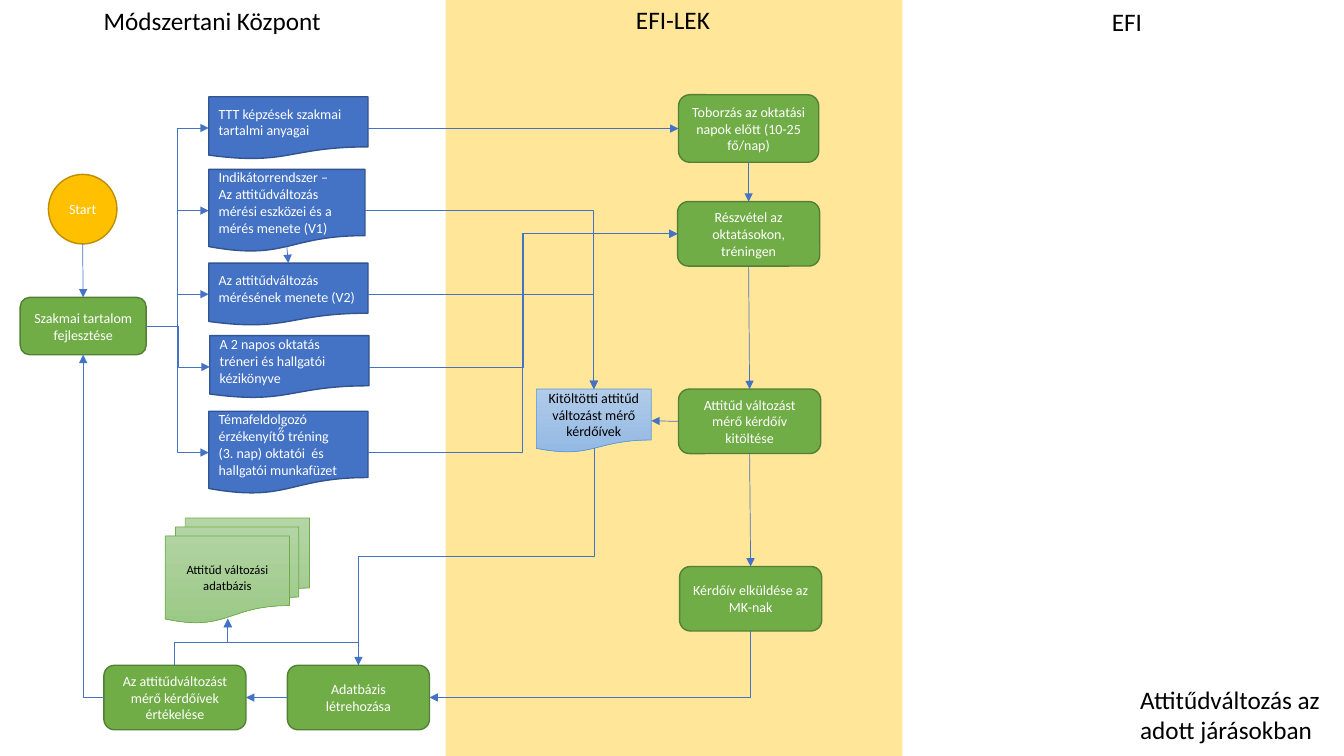
from lxml import etree
from pptx import Presentation
from pptx.dml.color import RGBColor
from pptx.enum.shapes import MSO_CONNECTOR, MSO_SHAPE
from pptx.enum.text import MSO_ANCHOR, PP_ALIGN
from pptx.oxml.ns import qn
from pptx.util import Pt

PX = 9144
LEFT, CENTER = PP_ALIGN.LEFT, PP_ALIGN.CENTER
MIDDLE = MSO_ANCHOR.MIDDLE
STRAIGHT, ELBOW = MSO_CONNECTOR.STRAIGHT, MSO_CONNECTOR.ELBOW
RECTANGLE, ROUNDED = MSO_SHAPE.RECTANGLE, MSO_SHAPE.ROUNDED_RECTANGLE
DOCUMENT, MULTIDOCUMENT = MSO_SHAPE.FLOWCHART_DOCUMENT, MSO_SHAPE.FLOWCHART_MULTIDOCUMENT
CIRCLE = MSO_SHAPE.FLOWCHART_CONNECTOR
TOP_SIDE, LEFT_SIDE, BOTTOM_SIDE, RIGHT_SIDE = range(4)
DOCUMENT_DEPTH = 0.934
FONT = "Calibri"
BLACK, WHITE, BLUE = "000000", "FFFFFF", "4472C4"


def color(value):
    return RGBColor.from_string(value)


def write(shape, lines, size, value, align):
    frame = shape.text_frame
    for index, line in enumerate(lines):
        para = frame.paragraphs[0] if index == 0 else frame.add_paragraph()
        para.text = line
        para.alignment = align
        para.font.name = FONT
        para.font.size = Pt(size)
        para.font.color.rgb = color(value)


def add_label(page, box, words, wrap=False):
    label = page.shapes.add_textbox(*(length * PX for length in box))
    label.text_frame.word_wrap = wrap
    write(label, [words], 18, BLACK, LEFT)


def add_node(page, kind, box, lines, fill, border, size=10, ink=WHITE, align=CENTER, weight=1):
    node = page.shapes.add_shape(kind, *(length * PX for length in box))
    node.shadow.inherit = False
    if len(fill) == 1:
        node.fill.solid()
        node.fill.fore_color.rgb = color(fill[0])
    else:
        node.fill.gradient()
        node.fill.gradient_angle = 270
        for stop, value in zip(node.fill.gradient_stops, fill):
            stop.color.rgb = color(value)
    node.line.color.rgb = color(border)
    node.line.width = Pt(weight)
    node.text_frame.word_wrap = True
    node.text_frame.vertical_anchor = MIDDLE
    write(node, lines, size, ink, align)
    return node


def add_task(page, box, words):
    return add_node(page, ROUNDED, box, [words], ["70AD47"], "538035")


def add_material(page, box, lines):
    return add_node(page, DOCUMENT, box, lines, [BLUE], "325491", align=LEFT)


def side(node, site):
    depth = DOCUMENT_DEPTH if node.auto_shape_type == DOCUMENT else 1
    middle_x, middle_y = node.left + node.width // 2, node.top + node.height // 2
    return (
        (middle_x, node.top),
        (node.left, middle_y),
        (middle_x, node.top + int(node.height * depth)),
        (node.left + node.width, middle_y),
    )[site]


def style_arrow(arrow):
    arrow.line.color.rgb = color(BLUE)
    arrow.line.width = Pt(0.5)
    properties = arrow._element.spPr
    tail = etree.SubElement(properties.find(qn("a:ln")), qn("a:tailEnd"))
    tail.set("type", "triangle")
    etree.SubElement(properties, qn("a:effectLst"))


def add_straight(page, source, source_site, target, target_site):
    arrow = page.shapes.add_connector(
        STRAIGHT, *side(source, source_site), *side(target, target_site))
    if source.auto_shape_type == ROUNDED:
        arrow.begin_connect(source, source_site)
    arrow.end_connect(target, target_site)
    style_arrow(arrow)


def add_elbow(page, start, end, vertical=False, single=False):
    (start_x, start_y), (end_x, end_y) = start, end
    if vertical:
        middle_x, middle_y = (start_x + end_x) // 2, (start_y + end_y) // 2
        half_x, half_y = (end_x - start_x) // 2, (end_y - start_y) // 2
        start_x, end_x = middle_x - half_y, middle_x + half_y
        start_y, end_y = middle_y + half_x, middle_y - half_x
    arrow = page.shapes.add_connector(ELBOW, start_x, start_y, end_x, end_y)
    properties = arrow._element.spPr
    if vertical:
        properties.find(qn("a:xfrm")).set("rot", "5400000")
    if single:
        properties.find(qn("a:prstGeom")).set("prst", "bentConnector2")
    style_arrow(arrow)


def draw_center_lane(page, box):
    left, top, width, height = box
    add_label(page, (left + 93, top, 238, 40), "Módszertani Központ")
    start = add_node(page, CIRCLE, (left + 48, top + 173, 68, 69), ["Start"], ["FFC000"], "BD8E00")
    develop = add_task(page, (left + 20, top + 295, 125, 57), "Szakmai tartalom fejlesztése")
    materials = [
        add_material(page, (left + x, top + y, w, h), lines)
        for x, y, w, h, lines in (
            (207, 96, 158, 62, ["TTT képzések szakmai tartalmi anyagai"]),
            (207, 168, 155, 82, ["Indikátorrendszer –",
                                 "Az attitűdváltozás mérési eszközei és a mérés menete (V1)"]),
            (207, 261, 158, 62, ["Az attitűdváltozás mérésének menete (V2)"]),
            (208, 333, 158, 62, ["A 2 napos oktatás tréneri és hallgatói kézikönyve"]),
            (207, 408, 158, 82, ["Témafeldolgozó érzékenyítő̋ tréning",
                                 "(3. nap) oktatói  és hallgatói munkafüzet"]),
        )
    ]
    evaluate = add_task(page, (left + 103, top + 660, 141, 64),
                        "Az attitűdváltozást mérő kérdőívek értékelése")
    create = add_task(page, (left + 285, top + 660, 141, 64), "Adatbázis létrehozása")
    add_node(page, MULTIDOCUMENT, (left + 164, top + 514, 143, 104), ["Attitűd változási adatbázis"],
             ["B5D5A7", "9CC987"], "70AD47", size=9, ink=BLACK, weight=0.5)
    database_foot = ((left + 226) * PX, (top + 614) * PX)

    add_straight(page, start, BOTTOM_SIDE, develop, TOP_SIDE)
    add_straight(page, materials[1], BOTTOM_SIDE, materials[2], TOP_SIDE)
    add_straight(page, create, LEFT_SIDE, evaluate, RIGHT_SIDE)
    for material in materials:
        add_elbow(page, side(develop, RIGHT_SIDE), side(material, LEFT_SIDE))
    for task in (evaluate, create):
        add_elbow(page, side(task, TOP_SIDE), database_foot, vertical=True)
    add_elbow(page, side(evaluate, LEFT_SIDE), side(develop, BOTTOM_SIDE), single=True)
    return materials, create


def draw_lek_lane(page, box):
    left, top, width, height = box
    band = page.shapes.add_shape(RECTANGLE, *(length * PX for length in box))
    band.shadow.inherit = False
    band.fill.solid()
    band.fill.fore_color.rgb = color("FFE699")
    band.line.fill.background()
    add_label(page, (left + 179, top - 1, 94, 40), "EFI-LEK")
    tasks = [
        add_task(page, (left + x, top + y, w, h), words)
        for x, y, w, h, words in (
            (231, 94, 139, 67, "Toborzás az oktatási napok előtt (10-25 fő/nap)"),
            (230, 200, 141, 64, "Részvétel az oktatásokon, tréningen"),
            (231, 386, 141, 64, "Attitűd változást mérő kérdőív kitöltése"),
            (232, 562, 141, 64, "Kérdőív elküldése az MK-nak"),
        )
    ]
    forms = add_node(page, DOCUMENT, (left + 90, top + 386, 114, 63),
                     ["Kitöltötti attitűd változást mérő kérdőívek"],
                     ["B1CBE9", "93B9E4"], "5B9BD5", ink=BLACK, weight=0.5)
    for source, target in zip(tasks, tasks[1:]):
        add_straight(page, source, BOTTOM_SIDE, target, TOP_SIDE)
    add_straight(page, tasks[2], LEFT_SIDE, forms, RIGHT_SIDE)
    return tasks, forms


def draw_efi_lane(page, box):
    left, top, width, height = box
    add_label(page, (left + 198, top + 1, 50, 40), "EFI")
    add_label(page, (left + 226, top + 674, 207, 71), "Attitűdváltozás az adott járásokban", wrap=True)


def draw_lane_crossings(page, materials, create, tasks, forms):
    recruit, attend, _, send = tasks
    for material, task in ((materials[0], recruit), (materials[3], attend), (materials[4], attend)):
        add_elbow(page, side(material, RIGHT_SIDE), side(task, LEFT_SIDE))
    for material in materials[1:3]:
        add_elbow(page, side(material, RIGHT_SIDE), side(forms, TOP_SIDE), single=True)
    add_elbow(page, side(forms, BOTTOM_SIDE), side(create, TOP_SIDE), vertical=True)
    add_elbow(page, side(send, BOTTOM_SIDE), side(create, RIGHT_SIDE), vertical=True, single=True)


def main():
    deck = Presentation()
    deck.slide_width, deck.slide_height = 1333 * PX, 750 * PX
    page = deck.slides.add_slide(deck.slide_layouts[6])
    tasks, forms = draw_lek_lane(page, (442, 0, 453, 750))
    materials, create = draw_center_lane(page, (0, 0, 442, 750))
    draw_efi_lane(page, (895, 0, 438, 750))
    draw_lane_crossings(page, materials, create, tasks, forms)
    deck.save("out.pptx")


if __name__ == "__main__":
    main()
